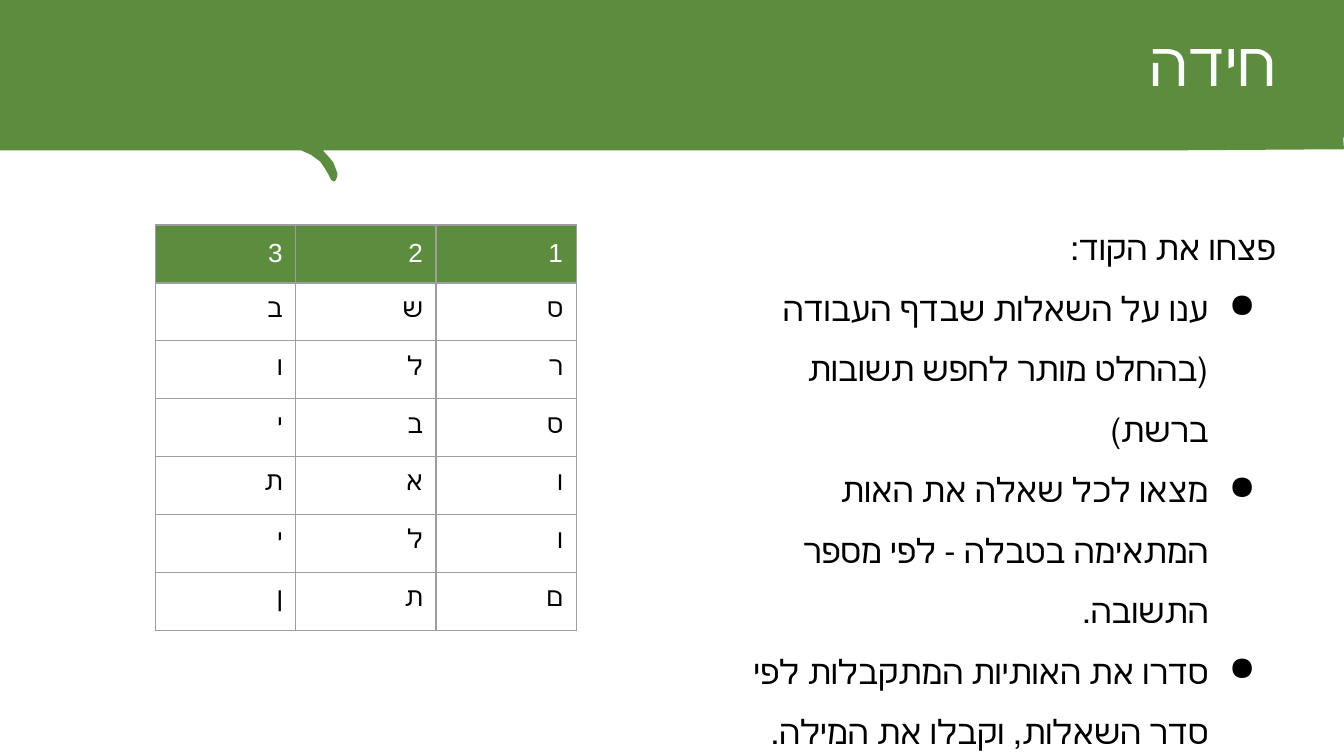
from lxml import etree
from pptx import Presentation
from pptx import util as u
from pptx.dml.color import RGBColor
from pptx.enum import shapes, text
from pptx.oxml.ns import qn

GREEN, WHITE, BLACK, GRAY = "5C8D3E", "FFFFFF", "000000", "9E9E9E"
TITLE = "חידה"
INTRO = "פצחו את הקוד:"
STEPS = [
    "ענו על השאלות שבדף העבודה (בהחלט מותר לחפש תשובות ברשת)",
    "מצאו לכל שאלה את האות המתאימה בטבלה - לפי מספר התשובה.",
    "סדרו את האותיות המתקבלות לפי סדר השאלות, וקבלו את המילה.",
]
LETTERS = ["321", "בשס", "ולר", "יבס", "תאו", "ילו", "ןתם"]
TAIL = [
    (25.4, 2.82), (25.37, 2.34), (-0.03, 2.34), (-0.03, 2.84), (5.69, 2.84),
    (5.87, 2.92), (6.05, 3.05), (6.12, 3.15), (6.2, 3.28), (6.25, 3.38),
    (6.27, 3.41), (6.31, 3.43), (6.34, 3.41), (6.37, 3.35), (6.38, 3.28),
    (6.35, 3.2), (6.3, 3.07), (6.22, 2.97), (6.1, 2.84), (22.3, 2.84),
]
COL_W, ROW_H = 2.65, 1.08


def color(value):
    return RGBColor.from_string(value)


def paint(shape, value):
    shape.shadow.inherit = False
    shape.fill.solid()
    shape.fill.fore_color.rgb = color(value)
    shape.line.fill.background()


def write(p, words, size, ink, spacing=None, rtl=True, bullet=False):
    pPr = p._p.get_or_add_pPr()
    p.alignment = text.PP_ALIGN.RIGHT
    if rtl:
        pPr.set("rtl", "1")
    if spacing:
        p.line_spacing = spacing
    if bullet:
        pPr.set("marL", str(u.Cm(1.27)))
        pPr.set("indent", str(-u.Cm(0.89)))
        clr = etree.SubElement(pPr, qn("a:buClr"))
        etree.SubElement(clr, qn("a:srgbClr"), val=ink)
        etree.SubElement(pPr, qn("a:buChar"), char="●")
    r = p.add_run()
    r.text = words
    for name, value in {"size": u.Pt(size), "name": "Arial"}.items():
        setattr(r.font, name, value)
    r.font.color.rgb = color(ink)


def inset(target):
    for side in ("left", "top", "right", "bottom"):
        setattr(target, f"margin_{side}", u.Cm(0.25))


def text_box(s, *box):
    tf = s.shapes.add_textbox(*map(u.Cm, box)).text_frame
    tf.word_wrap = True
    inset(tf)
    return tf


def border(cell):
    tcPr = cell._tc.get_or_add_tcPr()
    for i, side in enumerate(("lnL", "lnR", "lnT", "lnB")):
        ln = etree.Element(qn(f"a:{side}"), w=str(u.Pt(0.75)))
        fill = etree.SubElement(ln, qn("a:solidFill"))
        etree.SubElement(fill, qn("a:srgbClr"), val=GRAY)
        tcPr.insert(i, ln)


def add_banner(s):
    sp = s.shapes.add_shape(shapes.MSO_SHAPE.RECTANGLE, 0, 0, u.Cm(25.4), u.Cm(2.6))
    paint(sp, GREEN)
    points = [(u.Cm(x), u.Cm(y)) for x, y in TAIL]
    fb = s.shapes.build_freeform(*points[0])
    fb.add_line_segments(points[1:], close=True)
    paint(fb.convert_to_shape(), GREEN)


def add_letters(s):
    n_rows, n_cols = len(LETTERS), len(LETTERS[0])
    box = (2.94, 4.25, COL_W * n_cols, ROW_H * n_rows)
    table = s.shapes.add_table(n_rows, n_cols, *map(u.Cm, box)).table
    table.first_row = table.horz_banding = False
    for col in table.columns:
        col.width = u.Cm(COL_W)
    for i, letters in enumerate(LETTERS):
        table.rows[i].height = u.Cm(ROW_H)
        for j, letter in enumerate(letters):
            cell = table.cell(i, j)
            inset(cell)
            if i == 0:
                cell.fill.solid()
                cell.fill.fore_color.rgb = color(GREEN)
            else:
                cell.fill.background()
            border(cell)
            write(cell.text_frame.paragraphs[0], letter, 14, BLACK if i else WHITE, rtl=i > 0)


def main():
    prs = Presentation()
    prs.slide_width, prs.slide_height = u.Cm(25.4), u.Cm(14.28)
    s = prs.slides.add_slide(prs.slide_layouts[6])
    add_banner(s)
    tf = text_box(s, 0.69, 0.38, 23.67, 1.6)
    write(tf.paragraphs[0], TITLE, 33, WHITE, 0.9)
    add_letters(s)
    tf = text_box(s, 13.26, 3.66, 11.1, 9.83)
    write(tf.paragraphs[0], INTRO, 18, BLACK, 1.5)
    for step in STEPS:
        write(tf.add_paragraph(), step, 18, BLACK, 1.5, bullet=True)
    prs.save("out.pptx")


if __name__ == "__main__":
    main()
